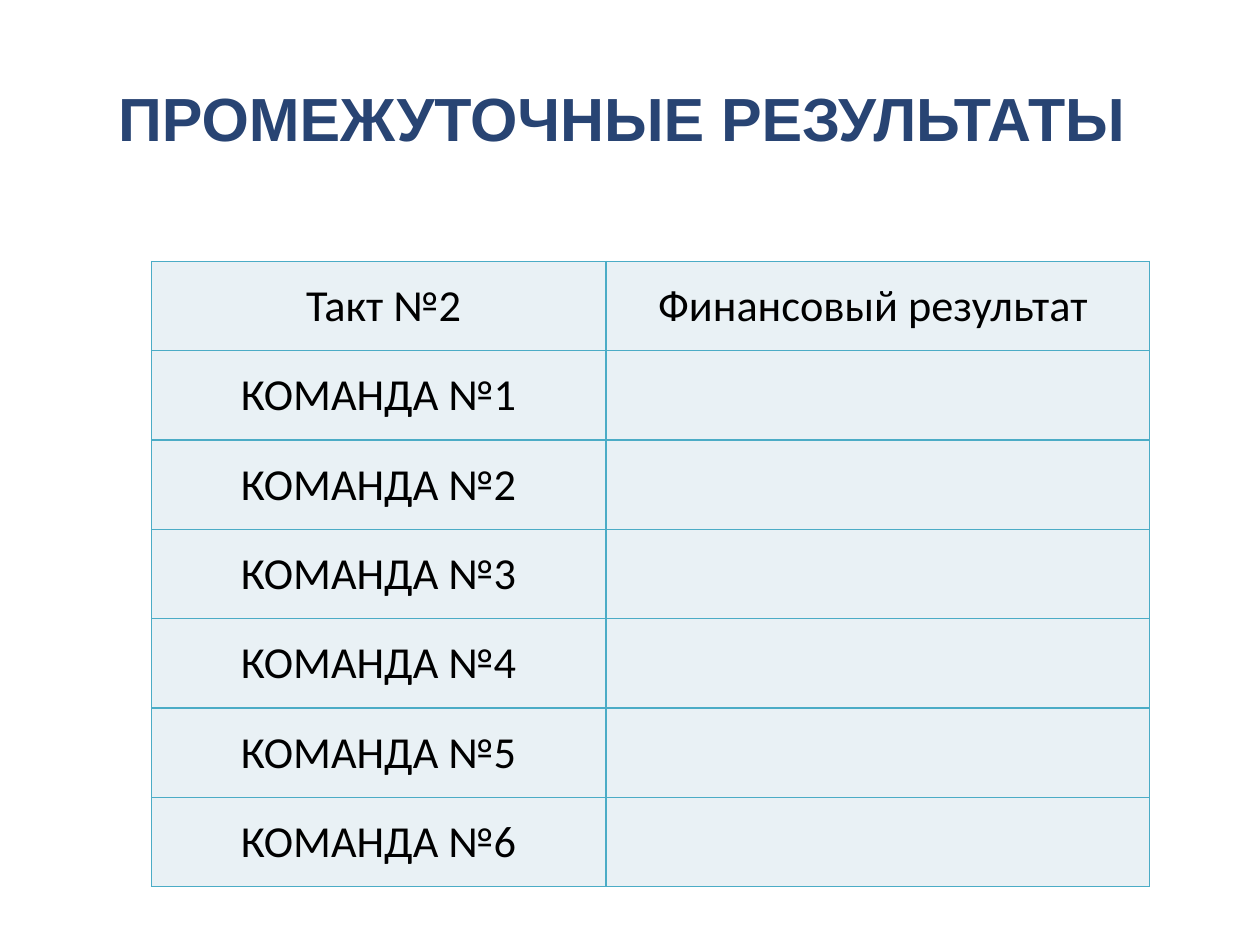
import pptx
import pptx.dml.color
import pptx.enum.text
import pptx.oxml
import pptx.oxml.ns
import pptx.util
from dataclasses import dataclass

Pt = pptx.util.Pt
RGB = pptx.dml.color.RGBColor.from_string
CENTER = pptx.enum.text.PP_ALIGN.CENTER
MIDDLE = pptx.enum.text.MSO_ANCHOR.MIDDLE

HEADING = "ПРОМЕЖУТОЧНЫЕ РЕЗУЛЬТАТЫ "
COLUMN_HEADS = (" Такт №2", "Финансовый результат ")
TEAMS = [f"КОМАНДА №{number}" for number in range(1, 7)]
RESULTS = [COLUMN_HEADS] + [(team, "") for team in TEAMS]

SLIDE_SIZE = (1024, 768)
HEADING_BOX = (51.2, 31, 921.6, 128)
TABLE_CORNER = (123, 212.4)
COLUMN_WIDTHS = (369.5, 442)
ROW_HEIGHT = 72.6
CELL_MARGIN = 0.7


@dataclass(frozen=True)
class Theme:
    heading_font: str = "Arial"
    heading_size: float = 49.5
    heading_color: str = "284473"
    cell_font: str = "Calibri"
    cell_size: float = 36
    cell_color: str = "000000"
    cell_fill: str = "E9F1F5"
    border_color: str = "4BACC6"
    border_width: float = 1


THEME = Theme()


def style_paragraph(paragraph, font_name, size, color, bold=False):
    paragraph.alignment = CENTER
    paragraph.font.name = font_name
    paragraph.font.size = Pt(size)
    paragraph.font.color.rgb = RGB(color)
    paragraph.font.bold = bold


def add_borders(cell):
    """Draw all four cell borders; they must precede the fill in tcPr."""
    properties = cell._tc.get_or_add_tcPr()
    for position, side in enumerate("LRTB"):
        border = pptx.oxml.parse_xml(
            f'<a:ln{side} {pptx.oxml.ns.nsdecls("a")} w="{Pt(THEME.border_width)}">'
            f'<a:solidFill><a:srgbClr val="{THEME.border_color}"/></a:solidFill>'
            f'</a:ln{side}>')
        properties.insert(position, border)


def add_heading(slide):
    heading = slide.shapes.title
    heading.left, heading.top, heading.width, heading.height = map(Pt, HEADING_BOX)
    frame = heading.text_frame
    frame.text = HEADING
    frame.word_wrap = True
    frame.auto_size = pptx.enum.text.MSO_AUTO_SIZE.NONE
    frame.vertical_anchor = MIDDLE
    frame.margin_left = frame.margin_right = Pt(10)
    frame.margin_top = frame.margin_bottom = Pt(5)
    style_paragraph(frame.paragraphs[0], THEME.heading_font, THEME.heading_size,
                    THEME.heading_color, bold=True)


def fill_cell(cell, text):
    cell.text = text
    cell.vertical_anchor = MIDDLE
    cell.margin_left = cell.margin_right = cell.margin_top = Pt(CELL_MARGIN)
    cell.margin_bottom = 0
    cell.fill.solid()
    cell.fill.fore_color.rgb = RGB(THEME.cell_fill)
    style_paragraph(cell.text_frame.paragraphs[0], THEME.cell_font,
                    THEME.cell_size, THEME.cell_color)
    add_borders(cell)


def add_results(slide):
    size = (sum(COLUMN_WIDTHS), ROW_HEIGHT * len(RESULTS))
    results = slide.shapes.add_table(len(RESULTS), len(COLUMN_WIDTHS),
                                     *map(Pt, TABLE_CORNER + size)).table
    results.first_row = results.horz_banding = False
    for column, width in zip(results.columns, COLUMN_WIDTHS):
        column.width = Pt(width)
    for row, texts in zip(results.rows, RESULTS):
        row.height = Pt(ROW_HEIGHT)
        for cell, text in zip(row.cells, texts):
            fill_cell(cell, text)


def main():
    presentation = pptx.Presentation()
    presentation.slide_width, presentation.slide_height = map(Pt, SLIDE_SIZE)
    title_only = presentation.slide_layouts[5]
    slide = presentation.slides.add_slide(title_only)
    add_heading(slide)
    add_results(slide)
    presentation.save("out.pptx")


if __name__ == "__main__":
    main()
